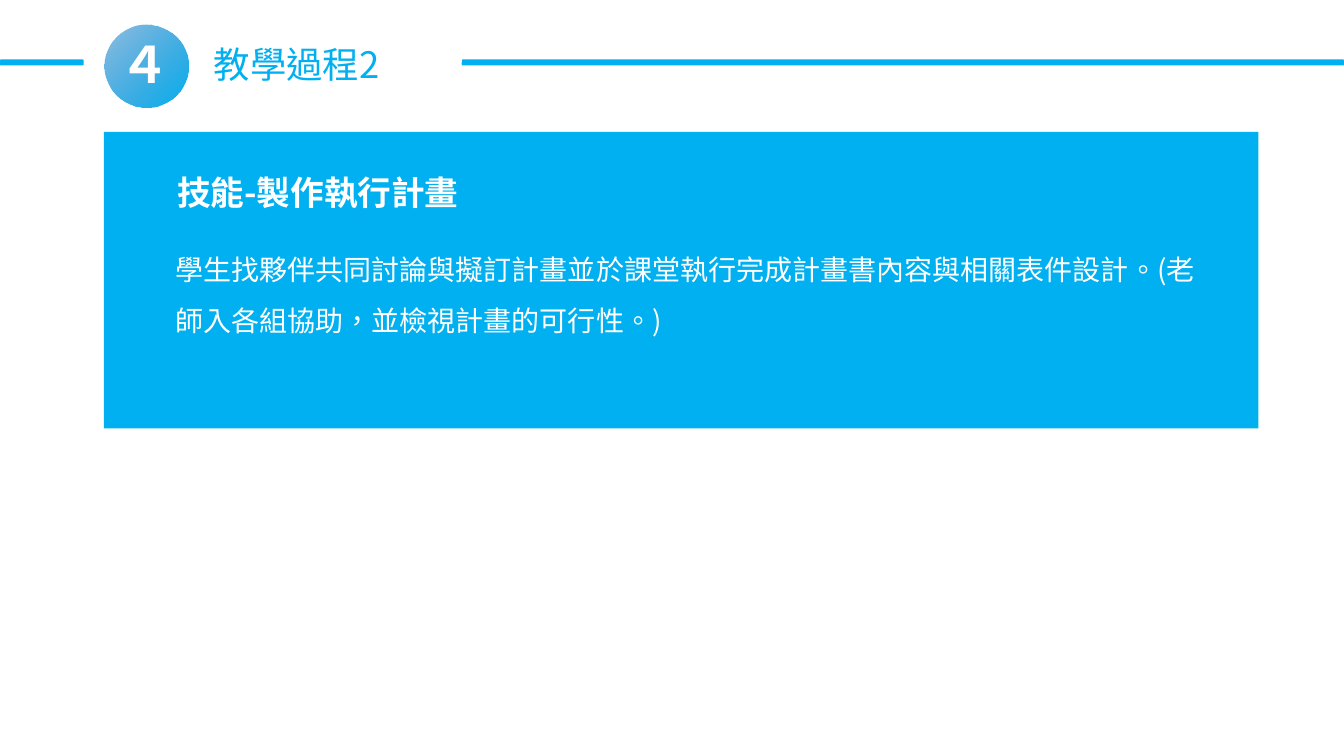
import pptx
import pptx.util
import pptx.dml.color
import pptx.enum.lang
import pptx.enum.shapes
import pptx.enum.text
import pptx.oxml
import pptx.oxml.ns

TITLE = "教學過程2"
NUMBER = "４"
HEAD = "技能-製作執行計畫"
BODY = "學生找夥伴共同討論與擬訂計畫並於課堂執行完成計畫書內容與相關表件設計。(老師入各組協助，並檢視計畫的可行性。)"

FONT = "Noto Sans CJK SC"
COLORS = {"sky": "00B0F0", "deep": "0070C0", "white": "FFFFFF"}
WIDTH, HEIGHT = 13.33, 7.5
RULES = [(0, 0.83), (4.58, WIDTH - 4.58)]
PANEL = (1.03, 1.31, 11.45, 2.94)
BLOCKS = [
    (HEAD, (1.66, 1.46, 6.63, 0.64), 24, True),
    (BODY, (1.64, 2.29, 10.46, 1.05), 20, False),
]

SHAPE = pptx.enum.shapes.MSO_SHAPE
ALIGN = pptx.enum.text.PP_ALIGN
ANCHOR = pptx.enum.text.MSO_ANCHOR


def color(name):
    return pptx.dml.color.RGBColor.from_string(COLORS[name])


def place(box):
    return [pptx.util.Inches(v) for v in box]


def draw(kind, box):
    shape = slide.shapes.add_shape(kind, *place(box))
    shape.shadow.inherit = False
    shape.fill.solid()
    shape.fill.fore_color.rgb = color("sky")
    shape.line.fill.background()
    return shape


def write(shape, text, size, ink="white", bold=False, align=ALIGN.LEFT, space=1):
    frame = shape.text_frame
    frame.word_wrap = True
    frame.auto_size = pptx.enum.text.MSO_AUTO_SIZE.NONE
    frame.vertical_anchor = ANCHOR.TOP
    para = frame.paragraphs[0]
    para.alignment = align
    para.line_spacing = space
    run = para.add_run()
    run.text = text
    run.font.size = pptx.util.Pt(size)
    run.font.bold = bold
    run.font.name = FONT
    run.font.language_id = pptx.enum.lang.MSO_LANGUAGE_ID.TRADITIONAL_CHINESE
    run.font.color.rgb = color(ink)
    east = pptx.oxml.parse_xml(
        f'<a:ea {pptx.oxml.ns.nsdecls("a")} typeface="{FONT}"/>')
    run.font._element.find(pptx.oxml.ns.qn("a:latin")).addnext(east)
    return run


deck = pptx.Presentation()
deck.slide_width, deck.slide_height = place((WIDTH, HEIGHT))
slide = deck.slides.add_slide(deck.slide_layouts[5])

title = slide.shapes.title
title.left, title.top, title.width, title.height = place((2.02, 0.37, 2.4, 0.54))
write(title, TITLE, 26, "sky")

for left, width in RULES:
    rule = draw(SHAPE.ROUNDED_RECTANGLE, (left, 0.59, width, 0.06))
    rule.adjustments[0] = 0.17

badge = draw(SHAPE.OVAL, (1.04, 0.24, 0.83, 0.83))
badge.fill.gradient()
badge.fill.gradient_angle = 315
for stop, name in zip(badge.fill.gradient_stops, ("deep", "sky")):
    stop.color.rgb = color(name)
first = badge._element.spPr.find(".//" + pptx.oxml.ns.qn("a:srgbClr"))
first.append(pptx.oxml.parse_xml(
    f'<a:alpha {pptx.oxml.ns.nsdecls("a")} val="44000"/>'))

label = slide.shapes.add_textbox(*place((0.78, 0.28, 1.31, 0.71)))
digit = write(label, NUMBER, 36, bold=True, align=ALIGN.CENTER)
digit.font._element.set("spc", "-300")

draw(SHAPE.RECTANGLE, PANEL)
for text, box, size, bold in BLOCKS:
    write(draw(SHAPE.RECTANGLE, box), text, size, bold=bold, space=1.5)

deck.save("out.pptx")
